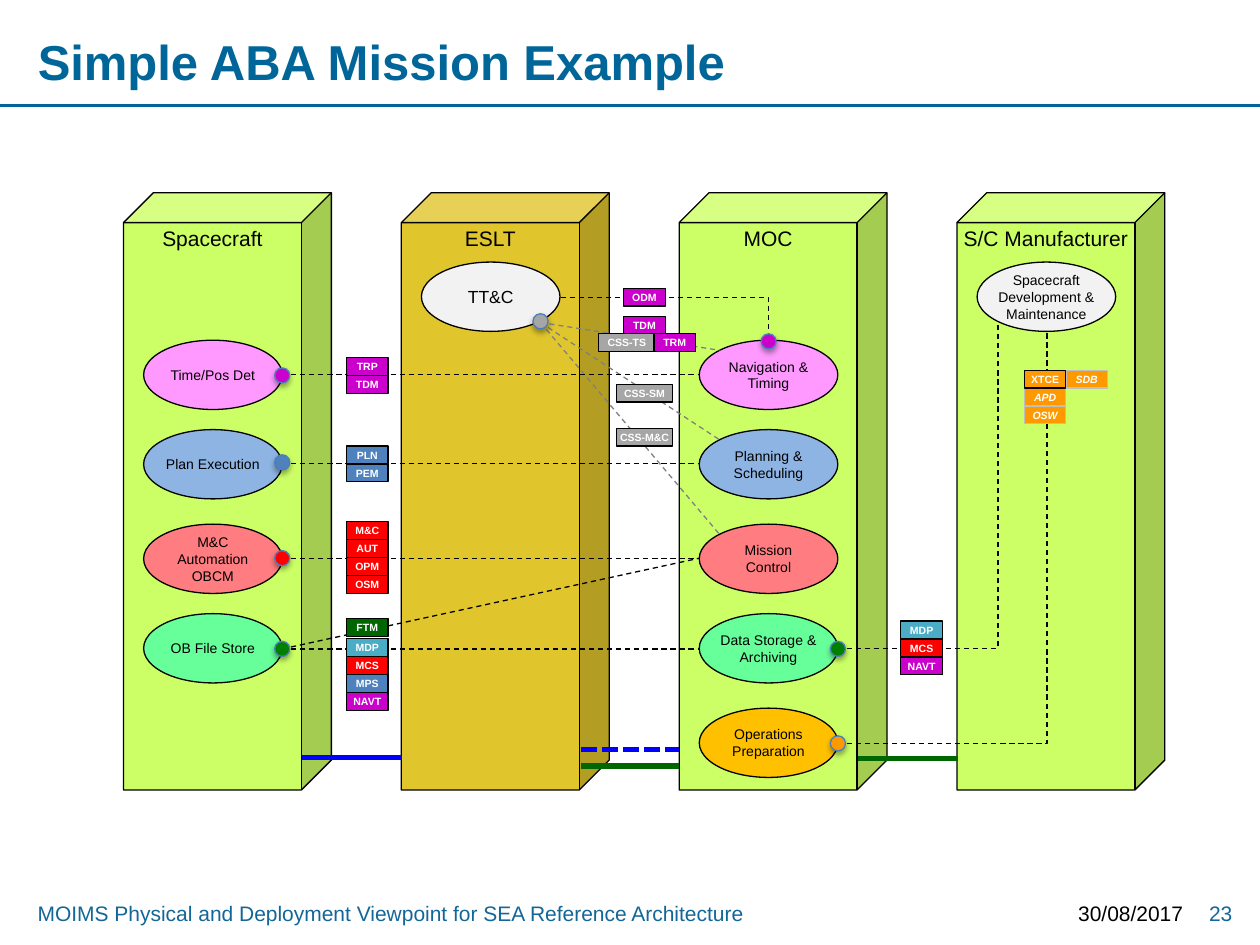
from dataclasses import dataclass

from lxml.etree import SubElement
from pptx import Presentation
from pptx.dml.color import RGBColor
from pptx.enum.dml import MSO_LINE
from pptx.enum.shapes import MSO_CONNECTOR, MSO_SHAPE
from pptx.enum.text import MSO_ANCHOR, MSO_AUTO_SIZE, PP_ALIGN
from pptx.oxml.ns import qn
from pptx.util import Inches, Pt


@dataclass(frozen=True)
class Theme:
    font: str = "Arial"
    title_size: int = 28
    heading_size: int = 12
    station_size: int = 10
    function_size: int = 8
    tag_size: int = 6
    title: str = "006699"
    footer: str = "136798"
    black: str = "000000"
    white: str = "FFFFFF"
    lime: str = "CCFF66"
    gold: str = "E0C62C"
    pale: str = "F2F2F2"
    sky: str = "8EB4E3"
    pink: str = "FF99FF"
    coral: str = "FF7C80"
    mint: str = "66FF99"
    amber: str = "FFC000"
    gray: str = "A6A6A6"
    dash_gray: str = "808080"
    light_gray: str = "BFBFBF"
    magenta: str = "CC00CC"
    blue: str = "4F81BD"
    dot_edge: str = "4B7EBC"
    red: str = "FF0000"
    teal: str = "4BACC6"
    orange: str = "FF9900"
    green: str = "008000"
    dark_green: str = "006600"
    link_blue: str = "0000FF"


theme = Theme()


def dress(shape, text="", fill=None, border=None, size=theme.heading_size, color=theme.black,
          bold=False, italic=False, align=PP_ALIGN.CENTER, anchor=MSO_ANCHOR.TOP,
          inset=(0.02, 0.02), wrap=True):
    if fill:
        shape.shadow.inherit = False
        shape.fill.solid()
        shape.fill.fore_color.rgb = RGBColor.from_string(fill)
        shape.line.color.rgb = RGBColor.from_string(border or theme.black)
        shape.line.width = Pt(0.75)
    frame = shape.text_frame
    frame.auto_size = MSO_AUTO_SIZE.NONE
    frame.word_wrap = wrap
    frame.vertical_anchor = anchor
    frame.margin_left = frame.margin_right = Inches(inset[0])
    frame.margin_top = frame.margin_bottom = Inches(inset[1])
    if text:
        frame.text = text
    for paragraph in frame.paragraphs:
        paragraph.alignment = align
        for run in paragraph.runs:
            run.font.name = theme.font
            run.font.size = Pt(size)
            run.font.bold = bold
            run.font.italic = italic
            run.font.color.rgb = RGBColor.from_string(color)


def connect(start, end, color=theme.black, width=0.75, dash=MSO_LINE.DASH, bent=False):
    kind = MSO_CONNECTOR.ELBOW if bent else MSO_CONNECTOR.STRAIGHT
    link = shapes.add_connector(kind, *map(Inches, start + end))
    link.line.color.rgb = RGBColor.from_string(color)
    link.line.width = Pt(width)
    if dash:
        link.line.dash_style = dash
    properties = link._element.spPr
    if bent:
        properties.find(qn("a:prstGeom")).set("prst", "bentConnector2")
    SubElement(properties, qn("a:effectLst"))


deck = Presentation()
deck.slide_width, deck.slide_height = Inches(10), Inches(7.5)
slide = deck.slides.add_slide(deck.slide_layouts[5])
shapes = slide.shapes

connect((0, 0.84), (10, 0.84), theme.title, 1.5, None)
title = shapes.title
title.left, title.top, title.width, title.height = map(Inches, (0.2, 0.21, 7.95, 0.55))
dress(title, "Simple ABA Mission Example", size=theme.title_size, color=theme.title, bold=True,
      align=PP_ALIGN.LEFT, anchor=MSO_ANCHOR.MIDDLE, inset=(0.1, 0.05))

for text, left, width, color, align in (
    ("MOIMS Physical and Deployment Viewpoint for SEA Reference Architecture",
     0.2, 8.11, theme.footer, PP_ALIGN.LEFT),
    ("30/08/2017", 8.39, 1.1, theme.black, PP_ALIGN.RIGHT),
    ("23", 9.41, 0.47, theme.footer, PP_ALIGN.RIGHT),
):
    footer = shapes.add_textbox(Inches(left), Inches(7.1), Inches(width), Inches(0.3))
    dress(footer, text, color=color, align=align, inset=(0.1, 0.05))

nodes = (("Spacecraft", theme.lime), ("ESLT", theme.gold),
         ("MOC", theme.lime), ("S/C Manufacturer", theme.lime))
node_left = [0.98 + 2.205 * column for column in range(len(nodes))]
for left, (text, fill) in zip(node_left, nodes):
    node = shapes.add_shape(MSO_SHAPE.CUBE, Inches(left), Inches(1.53), Inches(1.65), Inches(4.74))
    node.adjustments[0] = 0.144
    dress(node, text, fill)

for left, right, y, color, dash in (
    (2.4, 3.19, 6.01, theme.link_blue, None),
    (4.61, 5.39, 5.95, theme.link_blue, MSO_LINE.SQUARE_DOT),
    (4.61, 5.39, 6.08, theme.dark_green, None),
    (6.81, 7.6, 6.02, theme.dark_green, None),
):
    connect((left, y), (right, y), color, 3, dash)

for column, top, text, fill in (
    (3, 2.08, "Spacecraft Development & Maintenance", theme.pale),
    (1, 2.08, "TT&C", theme.pale),
    (2, 2.7, "Navigation & Timing", theme.pink),
    (2, 3.41, "Planning & Scheduling", theme.sky),
    (2, 4.16, "Mission\nControl", theme.coral),
    (2, 4.87, "Data Storage & Archiving", theme.mint),
    (2, 5.62, "Operations\nPreparation", theme.amber),
    (0, 2.7, "Time/Pos Det", theme.pink),
    (0, 3.41, "Plan Execution", theme.sky),
    (0, 4.16, "M&C\vAutomation\vOBCM", theme.coral),
    (0, 4.87, "OB File Store", theme.mint),
):
    function = shapes.add_shape(MSO_SHAPE.OVAL, Inches(node_left[column] + 0.16), Inches(top),
                                Inches(1.1), Inches(0.55))
    dress(function, text, fill, anchor=MSO_ANCHOR.MIDDLE, inset=(0, 0.05),
          size=theme.station_size if text == "TT&C" else theme.function_size)

for end in ((5.71, 2.78), (5.71, 3.49), (5.71, 4.24)):
    connect((4.29, 2.56), end, theme.dash_gray)
for y in (2.97, 3.68, 4.43, 5.15):
    connect((2.24, y), (5.55, y))
connect((2.24, 5.15), (5.55, 4.43))
for start, end in (((4.45, 2.36), (6.1, 2.7)),
                   ((6.65, 5.9), (8.31, 2.64)),
                   ((6.65, 5.15), (7.92, 2.56))):
    connect(start, end, bent=True)

for x, y, fill in (
    (4.29, 2.55, theme.gray), (6.1, 2.71, theme.magenta),
    (2.24, 2.98, theme.magenta), (2.24, 3.67, theme.blue),
    (2.24, 4.43, theme.red), (2.24, 5.15, theme.green),
    (6.65, 5.15, theme.green), (6.65, 5.9, theme.orange),
):
    port = shapes.add_shape(MSO_SHAPE.OVAL, Inches(x - 0.06), Inches(y - 0.06),
                            Inches(0.12), Inches(0.12))
    dress(port, fill=fill, border=theme.dot_edge)
    effects = port._element.spPr.find(qn("a:effectLst"))
    shadow = SubElement(effects, qn("a:outerShdw"), blurRad=str(Pt(3.1)), dist=str(Pt(1.8)),
                        dir="5400000", rotWithShape="0")
    tint = SubElement(shadow, qn("a:srgbClr"), val=theme.black)
    SubElement(tint, qn("a:alpha"), val="35000")

tag_stacks = (
    (4.95, 2.29, 0.33, (("ODM", theme.magenta),)),
    (4.95, 2.51, 0.33, (("TDM", theme.magenta),)),
    (4.75, 2.65, 0.45, (("CSS-TS", theme.gray),)),
    (5.19, 2.65, 0.33, (("TRM", theme.magenta),)),
    (4.89, 3.05, 0.45, (("CSS-SM", theme.gray),)),
    (4.89, 3.4, 0.45, (("CSS-M&C", theme.gray),)),
    (2.75, 2.84, 0.33, (("TRP", theme.magenta), ("TDM", theme.magenta))),
    (2.75, 3.54, 0.33, (("PLN", theme.blue), ("PEM", theme.blue))),
    (2.75, 4.14, 0.33, (("M&C", theme.red), ("AUT", theme.red),
                        ("OPM", theme.red), ("OSM", theme.red))),
    (2.75, 4.91, 0.33, (("FTM", theme.dark_green),)),
    (2.75, 5.07, 0.33, (("MDP", theme.teal), ("MCS", theme.red),
                        ("MPS", theme.blue), ("NAVT", theme.magenta))),
    (7.15, 4.93, 0.33, (("MDP", theme.teal), ("MCS", theme.red), ("NAVT", theme.magenta))),
    (8.46, 2.94, 0.33, (("SDB", theme.orange),)),
    (8.13, 3.08, 0.33, (("APD", theme.orange), ("OSW", theme.orange))),
    (8.13, 2.94, 0.33, (("XTCE", theme.orange),)),
)
for left, top, width, tags in tag_stacks:
    for row, (text, fill) in enumerate(tags):
        tag = shapes.add_shape(MSO_SHAPE.RECTANGLE, Inches(left), Inches(top + 0.143 * row),
                               Inches(width), Inches(0.14))
        draft = text in ("SDB", "APD", "OSW")
        dress(tag, text, fill, theme.light_gray if draft else theme.black, size=theme.tag_size,
              color=theme.white, bold=True, italic=draft, wrap=False)

deck.save("out.pptx")
